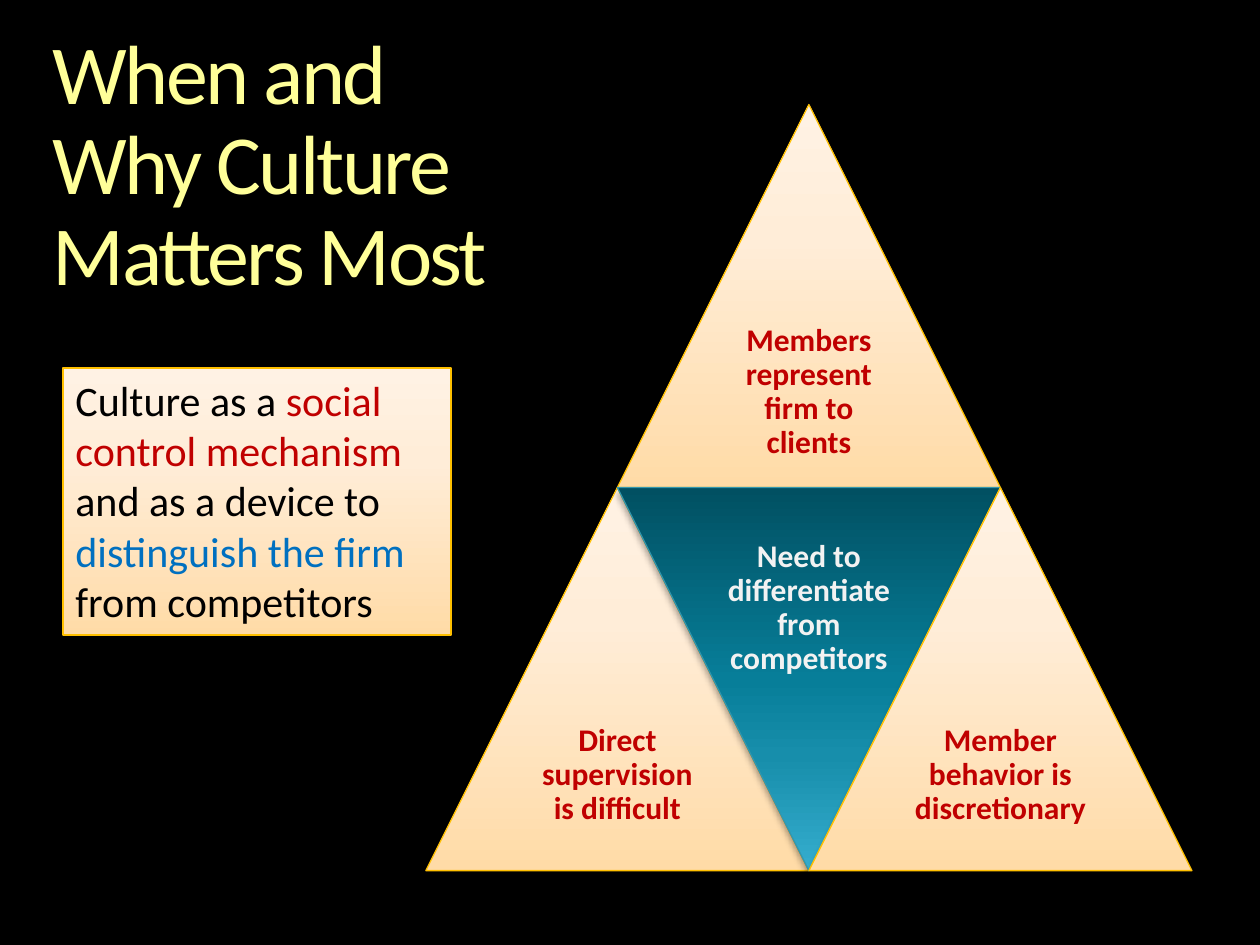
from lxml import etree
from pptx import Presentation
from pptx.dml.color import RGBColor
from pptx.enum.shapes import MSO_SHAPE
from pptx.enum.text import MSO_ANCHOR, MSO_AUTO_SIZE, PP_ALIGN
from pptx.oxml.ns import qn
from pptx.util import Inches, Pt

TRIANGLE, RECTANGLE = MSO_SHAPE.ISOSCELES_TRIANGLE, MSO_SHAPE.RECTANGLE
TOP, MIDDLE = MSO_ANCHOR.TOP, MSO_ANCHOR.MIDDLE
LEFT, CENTER = PP_ALIGN.LEFT, PP_ALIGN.CENTER
NO_FIT = MSO_AUTO_SIZE.NONE
FONT = "Calibri"

COLORS = {
    "background": "000000", "title": "FFFF99", "black": "000000",
    "red": "C00000", "blue": "0070C0", "white": "F2F2F2",
    "gold line": "FFC000", "teal line": "3497AE",
}
GRADIENTS = {
    "gold": [(0, "FFDBA7"), (65, "FFEDD8"), (100, "FFF2E4")],
    "teal": [(0, "015062"), (50, "077E99"), (70, "178EAB"), (100, "35ADCE")],
}

TITLE = [("When and Why Culture Matters Most", "title")]
SUMMARY = [
    ("Culture as a ", "black"), ("social control mechanism ", "red"),
    ("and as a device to ", "black"), ("distinguish the firm ", "blue"),
    ("from competitors", "black"),
]
# column and row count in half and whole triangle sides
PYRAMID = [
    {"text": "Members represent firm to clients", "column": 1, "row": 0},
    {"text": "Direct supervision is difficult", "column": 0, "row": 1},
    {"text": "Need to differentiate from competitors", "column": 1, "row": 1, "inverted": True},
    {"text": "Member behavior is discretionary", "column": 2, "row": 1},
]
PYRAMID_LEFT, PYRAMID_TOP, SIDE = 3.38, 0.83, 3.04


def color(name):
    return RGBColor.from_string(COLORS[name])


def write_text(shape, spans, size, bold=False, align=LEFT, anchor=TOP,
               insets=(0.1, 0.05, 0.1, 0.05), line_spacing=1.0, tracking=None):
    frame = shape.text_frame
    frame.word_wrap = True
    frame.auto_size = NO_FIT
    frame.vertical_anchor = anchor
    (frame.margin_left, frame.margin_top,
     frame.margin_right, frame.margin_bottom) = map(Inches, insets)
    para = frame.paragraphs[0]
    para.alignment = align
    para.line_spacing = line_spacing
    for text, name in spans:
        span = para.add_run()
        span.text = text
        span.font.name = FONT
        span.font.size = Pt(size)
        span.font.bold = bold
        span.font.color.rgb = color(name)
        if tracking:
            span.font._element.set("spc", str(round(tracking * 100)))


def add_color(parent, value):
    return etree.SubElement(parent, qn("a:srgbClr"), val=value)


def add_panel(page, kind, area, theme):
    panel = page.shapes.add_shape(kind, *map(Inches, area))
    panel.line.color.rgb = color(f"{theme} line")
    panel.line.width = Pt(0.75)
    panel.fill.gradient()
    panel.fill.gradient_angle = 90
    stops = panel._element.spPr.find(qn("a:gradFill")).find(qn("a:gsLst"))
    for stop in list(stops):
        stops.remove(stop)
    for position, value in GRADIENTS[theme]:
        add_color(etree.SubElement(stops, qn("a:gs"), pos=str(position * 1000)), value)
    panel.shadow.inherit = False
    effects = panel._element.spPr.find(qn("a:effectLst"))
    shadow = etree.SubElement(effects, qn("a:outerShdw"), blurRad=str(Pt(4)),
                              dist=str(Pt(3)), dir="5400000", rotWithShape="0")
    etree.SubElement(add_color(shadow, COLORS["black"]), qn("a:alpha"), val="35000")
    return panel


def add_triangle(page, text, column, row, inverted=False):
    left = PYRAMID_LEFT + column * SIDE / 2
    top = PYRAMID_TOP + row * SIDE
    triangle = add_panel(page, TRIANGLE, (left, top, SIDE, SIDE),
                         "teal" if inverted else "gold")
    triangle.rotation = 180 if inverted else 0
    label_top = top if inverted else top + SIDE / 2
    label = page.shapes.add_textbox(
        *map(Inches, (left + SIDE / 4, label_top, SIDE / 2, SIDE / 2)))
    write_text(label, [(text, "white" if inverted else "red")], 18, bold=True,
               align=CENTER, anchor=MIDDLE, line_spacing=0.9,
               insets=(0.07, 0.47 if inverted else 0.07, 0.07, 0.07))


def main():
    deck = Presentation()
    deck.slide_width, deck.slide_height = Inches(10), Inches(7.5)
    page = deck.slides.add_slide(deck.slide_layouts[5])
    page.background.fill.solid()
    page.background.fill.fore_color.rgb = color("background")

    title = page.shapes.title
    title.left, title.top, title.width, title.height = map(Inches, (0.42, 0.25, 3.92, 2.18))
    write_text(title, TITLE, 48, insets=(0, 0, 0, 0), line_spacing=0.9, tracking=-1.5)

    for part in PYRAMID:
        add_triangle(page, **part)

    summary = add_panel(page, RECTANGLE, (0.5, 2.92, 3.08, 2.12), "gold")
    write_text(summary, SUMMARY, 24)
    deck.save("out.pptx")


if __name__ == "__main__":
    main()
